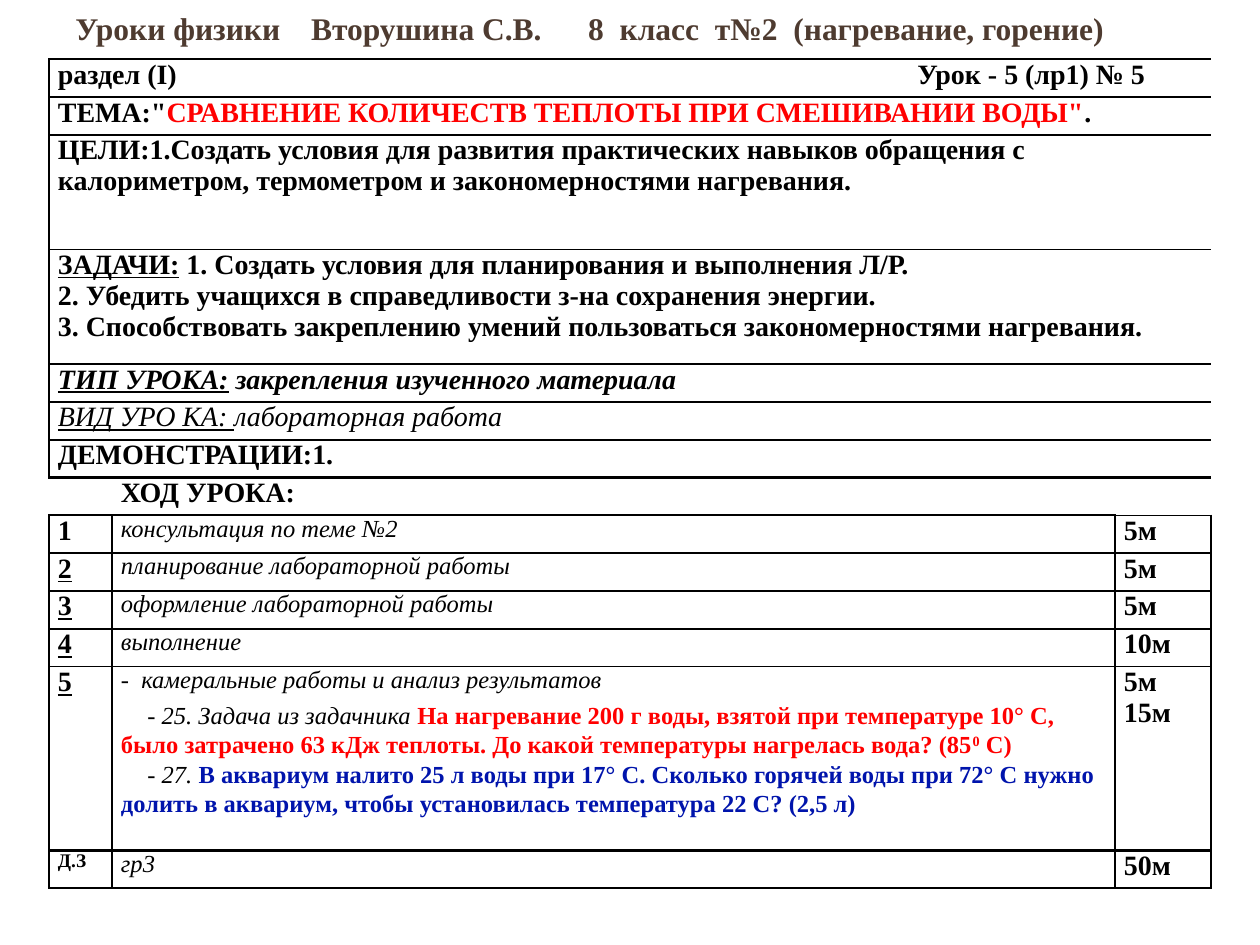
import pptx
import pptx.util
import pptx.dml.color
import pptx.enum.text
import pptx.oxml
import lxml.etree

COLORS = {"title": "4E3B30", "text": "000000", "red": "FF0000", "blue": "0014AC"}
FONT = "Times New Roman"
BODY, STEP, SMALL = 16, 14, 11
THIN, HEAVY = 1, 1.5

# Content: a run is (text, style letters, colour); a paragraph is a list of runs.
# Style letters: b bold, i italic, u underline, ^ superscript
TITLE = "Уроки физики\tВторушина С.В.\t8  класс  т№2  (нагревание, горение)"
TITLE_TABS = (1.87, 4.07)
LESSON_TABS = (6.82,)

LESSON = [
    [[("раздел (I)\tУрок - 5 (лр1) № 5", "b", "text")]],
    [[("ТЕМА:\"", "b", "text"),
      ("СРАВНЕНИЕ КОЛИЧЕСТВ ТЕПЛОТЫ ПРИ СМЕШИВАНИИ ВОДЫ\"", "b", "red"),
      (".", "b", "text")]],
    [[("ЦЕЛИ:1.Создать условия для развития практических навыков обращения с "
       "калориметром, термометром и закономерностями нагревания.", "b", "text")]],
    [[("ЗАДАЧИ:", "bu", "text"),
      (" 1. Создать условия для планирования и выполнения Л/Р.", "b", "text")],
     [("2. Убедить учащихся в справедливости з-на сохранения энергии.", "b", "text")],
     [("3. Способствовать закреплению умений пользоваться закономерностями нагревания.",
       "b", "text")]],
    [[("ТИП УРОКА:", "biu", "text"), (" закрепления изученного материала", "bi", "text")]],
    [[("ВИД УРО КА: ", "iu", "text"), ("лабораторная работа", "i", "text")]],
    [[("ДЕМОНСТРАЦИИ:1.", "b", "text")]],
]
PLAN_TITLE = "ХОД УРОКА:"
STEPS = [
    ("1", "консультация по теме №2", ["5м"]),
    ("2", "планирование лабораторной работы", ["5м"]),
    ("3", "оформление лабораторной работы", ["5м"]),
    ("4", "выполнение", ["10м"]),
    ("5", "-  камеральные работы и анализ результатов", ["5м", "15м"]),
    ("Д.З", "гр3", ["50м"]),
]
PROBLEMS = [
    [("- 25. Задача из задачника ", "i", "text"),
     ("На нагревание 200 г воды, взятой при температуре 10° С, было затрачено 63 кДж "
      "теплоты. До какой температуры нагрелась вода? (85", "b", "red"),
     ("0", "b^", "red"), (" С)", "b", "red")],
    [("- 27. ", "i", "text"),
     ("В аквариум налито 25 л воды при 17° С. Сколько горячей воды при 72° С нужно долить "
      "в аквариум, чтобы установилась температура 22 С? (2,5 л)", "b", "blue")],
]

# Grid
COLUMNS = (0.5, 7.96, 0.76)
LINE, GOAL, TASK = 0.3, 0.91, 1.46
PLAN_ROW = len(LESSON)
FIRST_STEP = PLAN_ROW + 1
LAST_STEP = PLAN_ROW + len(STEPS)
ROWS = [LINE] * (LAST_STEP + 1)
ROWS[2] = ROWS[3] = GOAL
ROWS[LAST_STEP - 1] = TASK
FRAMED = (1, PLAN_ROW - 1)
HEAVY_EDGES = {1, 2, PLAN_ROW - 1, PLAN_ROW, FIRST_STEP, LAST_STEP, LAST_STEP + 1}


def style_font(font, style, color, size):
    font.name, font.size = FONT, pptx.util.Pt(size)
    font.bold, font.italic, font.underline = "b" in style, "i" in style, "u" in style
    font.color.rgb = pptx.dml.color.RGBColor.from_string(COLORS[color])


def write(frame, paragraphs, size):
    for n, runs in enumerate(paragraphs):
        paragraph = frame.paragraphs[0] if n == 0 else frame.add_paragraph()
        style_font(paragraph.font, runs[0][1], runs[0][2], size)
        for text, style, color in runs:
            run = paragraph.add_run()
            run.text = text
            if (style, color) != runs[0][1:]:
                style_font(run.font, style, color, size)
            if "^" in style:
                run.font._element.set("baseline", "30000")


def set_tabs(paragraph, stops):
    properties = paragraph._p.get_or_add_pPr()
    tabs = lxml.etree.Element(pptx.oxml.ns.qn("a:tabLst"))
    for stop in stops:
        lxml.etree.SubElement(tabs, pptx.oxml.ns.qn("a:tab"),
                              pos=str(pptx.util.Inches(stop)), algn="l")
    properties.find(pptx.oxml.ns.qn("a:defRPr")).addprevious(tabs)


def set_borders(cell, weights):
    """Weights run left, right, top, bottom; 0 hides the line."""
    properties = cell._tc.get_or_add_tcPr()
    for n, (tag, weight) in enumerate(zip(("lnL", "lnR", "lnT", "lnB"), weights)):
        line = lxml.etree.Element(pptx.oxml.ns.qn("a:" + tag), w=str(pptx.util.Pt(weight)))
        if weight:
            fill = lxml.etree.SubElement(line, pptx.oxml.ns.qn("a:solidFill"))
            lxml.etree.SubElement(fill, pptx.oxml.ns.qn("a:srgbClr"), val=COLORS["text"])
        else:
            lxml.etree.SubElement(line, pptx.oxml.ns.qn("a:noFill"))
        properties.insert(n, line)


def border_weights(row, column):
    top, bottom = (HEAVY if edge in HEAVY_EDGES else THIN for edge in (row, row + 1))
    if row == PLAN_ROW:
        return 0, 0, top, THIN if column == 2 else bottom
    if row == FIRST_STEP and column == 2:
        top = THIN
    outer = HEAVY if row in FRAMED else THIN
    if row < PLAN_ROW:
        return outer if column == 0 else 0, outer if column == 2 else 0, top, bottom
    number_edge = THIN if row == LAST_STEP else HEAVY
    right_edge = HEAVY if row == LAST_STEP else THIN
    sides = (HEAVY, number_edge, THIN, right_edge)
    return sides[column], sides[column + 1], top, bottom


deck = pptx.Presentation()
deck.slide_width, deck.slide_height = pptx.util.Inches(10), pptx.util.Inches(7.5)
slide = deck.slides.add_slide(deck.slide_layouts[6])

# Title
heading = slide.shapes.add_textbox(*map(pptx.util.Inches, (0.5, 0, 9.11, 0.45))).text_frame
heading.word_wrap = True
heading.vertical_anchor = pptx.enum.text.MSO_ANCHOR.MIDDLE
write(heading, [[(TITLE, "b", "title")]], 18)
set_tabs(heading.paragraphs[0], TITLE_TABS)

# Table grid
plan = slide.shapes.add_table(len(ROWS), len(COLUMNS), *map(
    pptx.util.Inches, (0.39, 0.47, sum(COLUMNS), sum(ROWS)))).table
plan.first_row = plan.horz_banding = False
for column, width in zip(plan.columns, COLUMNS):
    column.width = pptx.util.Inches(width)
for row, height in enumerate(ROWS):
    plan.rows[row].height = pptx.util.Inches(height)
    for column in range(len(COLUMNS)):
        cell = plan.cell(row, column)
        cell.margin_left = cell.margin_right = pptx.util.Inches(0.07)
        cell.margin_top = cell.margin_bottom = 0
        cell.fill.background()
        set_borders(cell, border_weights(row, column))

# Lesson summary
for row, paragraphs in enumerate(LESSON):
    plan.cell(row, 0).merge(plan.cell(row, 2))
    write(plan.cell(row, 0).text_frame, paragraphs, BODY)
set_tabs(plan.cell(0, 0).text_frame.paragraphs[0], LESSON_TABS)

# Lesson steps
write(plan.cell(PLAN_ROW, 1).text_frame, [[(PLAN_TITLE, "b", "text")]], BODY)
for row, (number, activity, minutes) in enumerate(STEPS, FIRST_STEP):
    underlined = FIRST_STEP < row < LAST_STEP
    write(plan.cell(row, 0).text_frame, [[(number, "bu" if underlined else "b", "text")]],
          SMALL if row == LAST_STEP else BODY)
    problems = PROBLEMS if row == LAST_STEP - 1 else []
    activity_frame = plan.cell(row, 1).text_frame
    write(activity_frame, [[(activity, "i", "text")]] + problems, STEP)
    for n, paragraph in enumerate(activity_frame.paragraphs[1:]):
        paragraph.line_spacing = 1.08
        paragraph.space_before = pptx.util.Pt(0 if n else 4)
        paragraph._p.get_or_add_pPr().set("indent", str(pptx.util.Inches(0.21)))
    write(plan.cell(row, 2).text_frame, [[(time, "b", "text")] for time in minutes], BODY)

deck.save("out.pptx")
